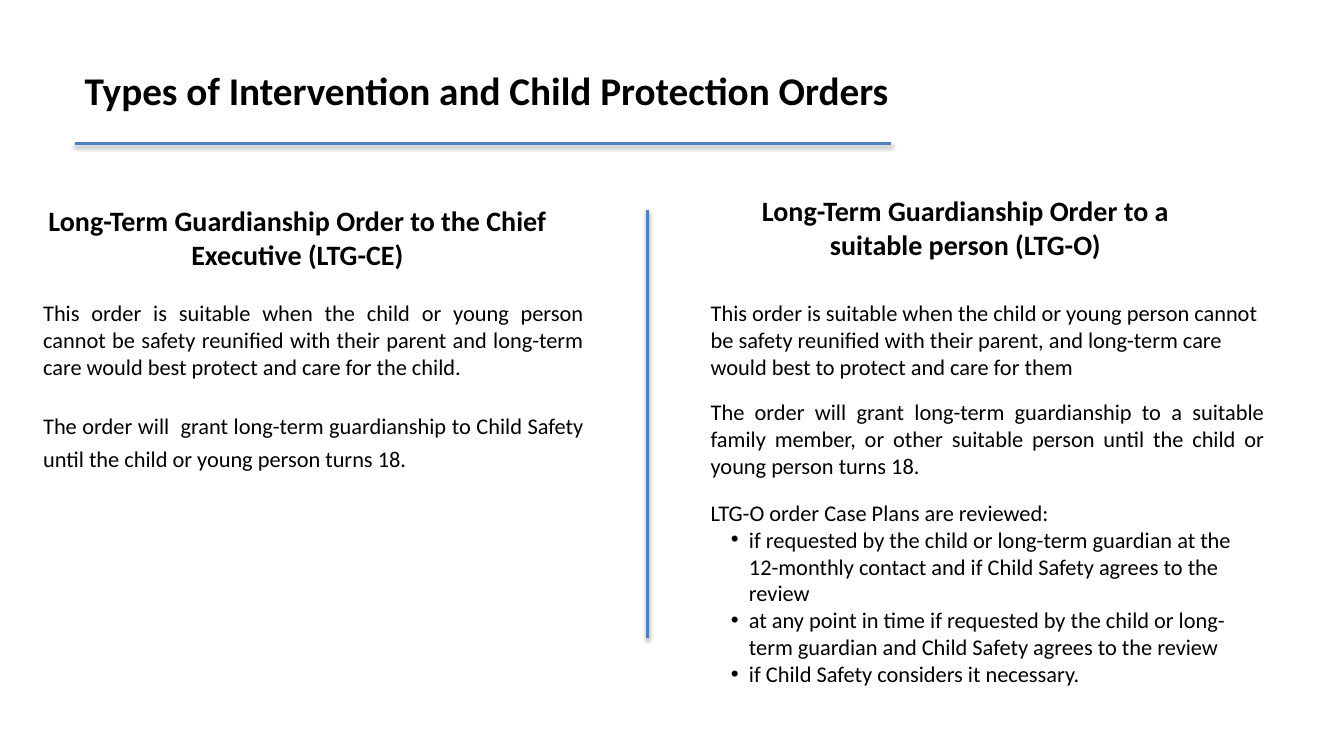
from lxml.etree import SubElement
from pptx import Presentation
from pptx.dml.color import RGBColor
from pptx.enum.shapes import MSO_CONNECTOR as Connector
from pptx.enum.text import MSO_ANCHOR as Anchor, PP_ALIGN as Align
from pptx.oxml.ns import qn
from pptx.util import Pt

PX = 9144
BLACK = RGBColor(0x00, 0x00, 0x00)
BLUE = RGBColor(0x4F, 0x81, 0xBD)
FONT = "Calibri"
BULLET_LEFT, BULLET_HANG = 38, 18

TITLE = "Types of Intervention and Child Protection Orders"
CHIEF_HEADING = "Long-Term Guardianship Order to the Chief Executive (LTG-CE)"
PERSON_HEADING = "Long-Term Guardianship Order to a suitable person (LTG-O)"
CHIEF_SUITABLE = (
    "This order is suitable when the child or young person cannot be safety reunified "
    "with their parent and long-term care would best protect and care for the child."
)
CHIEF_GRANT = (
    "The order will  grant long-term guardianship to Child Safety "
    "until the child or young person turns 18."
)
PERSON_SUITABLE = (
    "This order is suitable when the child or young person cannot be safety reunified "
    "with their parent, and long-term care would best to protect and care for them"
)
PERSON_GRANT = (
    "The order will grant long-term guardianship to a suitable family member, "
    "or other suitable person until the child or young person turns 18."
)
REVIEW_INTRO = "LTG-O order Case Plans are reviewed:"
REVIEW_REASONS = [
    "if requested by the child or long-term guardian at the 12-monthly contact "
    "and if Child Safety agrees to the review",
    "at any point in time if requested by the child or long-term guardian "
    "and Child Safety agrees to the review",
    "if Child Safety considers it necessary.",
]


def add_box(slide, left, top, width, height, anchor=Anchor.TOP):
    box = slide.shapes.add_textbox(left * PX, top * PX, width * PX, height * PX)
    frame = box.text_frame
    frame.word_wrap = True
    frame.vertical_anchor = anchor
    return frame


def write(frame, text, size=16, bold=False, align=Align.LEFT, before=0, spacing=1.0, bullet=False):
    first = frame.paragraphs[0]
    paragraph = frame.add_paragraph() if first.runs else first
    if bullet:
        properties = paragraph._p.get_or_add_pPr()
        properties.set("marL", str(BULLET_LEFT * PX))
        properties.set("indent", str(-BULLET_HANG * PX))
        SubElement(properties, qn("a:buFont"), typeface="Arial")
        SubElement(properties, qn("a:buChar"), char="•")
    paragraph.alignment = align
    paragraph.space_before = Pt(before)
    paragraph.line_spacing = spacing
    run = paragraph.add_run()
    run.text = text
    run.font.name = FONT
    run.font.size = Pt(size)
    run.font.bold = bold
    run.font.color.rgb = BLACK


def add_rule(slide, x1, y1, x2, y2):
    rule = slide.shapes.add_connector(Connector.STRAIGHT, x1 * PX, y1 * PX, x2 * PX, y2 * PX)
    rule.line.color.rgb = BLUE
    rule.line.width = Pt(2)
    effects = SubElement(rule._element.spPr, qn("a:effectLst"))
    shadow = SubElement(
        effects, qn("a:outerShdw"), blurRad="40000", dist="20000", dir="5400000", rotWithShape="0"
    )
    shade = SubElement(shadow, qn("a:srgbClr"), val=str(BLACK))
    SubElement(shade, qn("a:alpha"), val="38000")


def main():
    deck = Presentation()
    deck.slide_width = 1333 * PX
    deck.slide_height = 750 * PX
    slide = deck.slides.add_slide(deck.slide_layouts[6])

    add_rule(slide, 74, 142, 884, 142)
    title = add_box(slide, 74, 58, 831, 62, Anchor.MIDDLE)
    write(title, TITLE, size=28, bold=True)
    add_rule(slide, 642, 208, 642, 633)

    chief_heading = add_box(slide, 36, 197, 518, 75)
    write(chief_heading, CHIEF_HEADING, size=20, bold=True, align=Align.CENTER)
    chief_body = add_box(slide, 33, 292, 556, 258)
    write(chief_body, CHIEF_SUITABLE, align=Align.JUSTIFY)
    write(chief_body, CHIEF_GRANT, align=Align.JUSTIFY, before=19.5, spacing=1.2)

    person_heading = add_box(slide, 705, 179, 505, 93, Anchor.MIDDLE)
    write(person_heading, PERSON_HEADING, size=20, bold=True, align=Align.CENTER)
    person_body = add_box(slide, 695, 292, 569, 370)
    write(person_body, PERSON_SUITABLE)
    write(person_body, PERSON_GRANT, align=Align.JUSTIFY, before=13)
    write(person_body, REVIEW_INTRO, before=14.5)
    for reason in REVIEW_REASONS:
        write(person_body, reason, bullet=True)

    deck.save("out.pptx")


if __name__ == "__main__":
    main()
